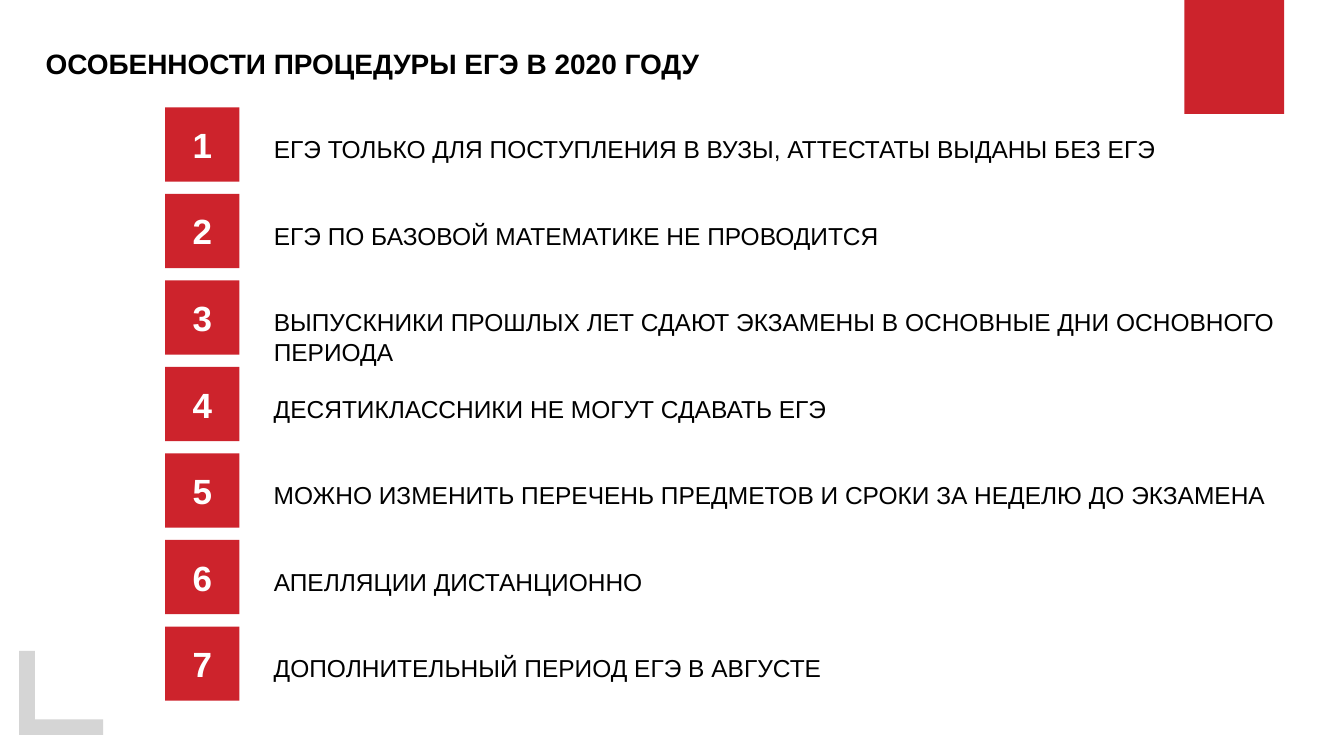
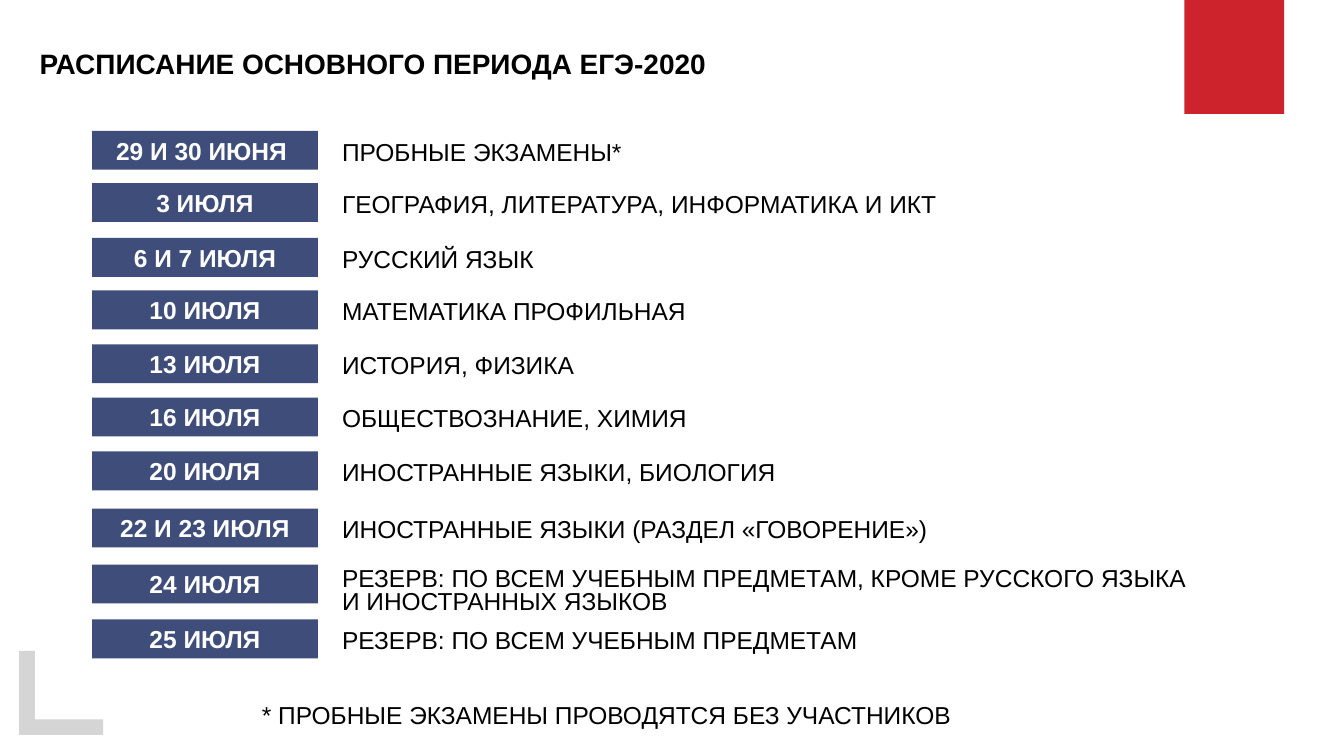
from pptx import Presentation
from pptx.dml.color import RGBColor
from pptx.enum.shapes import MSO_SHAPE
from pptx.enum.text import MSO_ANCHOR, MSO_AUTO_SIZE, PP_ALIGN
from pptx.util import Pt

FONT = "Arial"
COLORS = {
    "black": "000000",
    "white": "FFFFFF",
    "corner": "D5D5D5",
    "tab": "CC232C",
    "number": "CD232C",
    "date": "3F4D7B",
}
TEXT_MARGIN = 7.2

FEATURES = [
    ("ЕГЭ ТОЛЬКО ДЛЯ ПОСТУПЛЕНИЯ В ВУЗЫ, АТТЕСТАТЫ ВЫДАНЫ БЕЗ ЕГЭ", 1292.5),
    ("ЕГЭ ПО БАЗОВОЙ МАТЕМАТИКЕ НЕ ПРОВОДИТСЯ", 1134.5),
    ("ВЫПУСКНИКИ ПРОШЛЫХ ЛЕТ СДАЮТ ЭКЗАМЕНЫ В ОСНОВНЫЕ ДНИ ОСНОВНОГО ПЕРИОДА", 1469),
    ("ДЕСЯТИКЛАССНИКИ НЕ МОГУТ СДАВАТЬ ЕГЭ", 1246.5),
    ("МОЖНО ИЗМЕНИТЬ ПЕРЕЧЕНЬ ПРЕДМЕТОВ И СРОКИ ЗА НЕДЕЛЮ ДО ЭКЗАМЕНА", 1487),
    ("АПЕЛЛЯЦИИ ДИСТАНЦИОННО", 754.5),
    ("ДОПОЛНИТЕЛЬНЫЙ ПЕРИОД ЕГЭ В АВГУСТЕ", 1168.5),
]

SCHEDULE = [
    (187, "29 И 30 ИЮНЯ ", ["ПРОБНЫЕ ЭКЗАМЕНЫ*"]),
    (261.5, "3 ИЮЛЯ", ["ГЕОГРАФИЯ, ЛИТЕРАТУРА, ИНФОРМАТИКА И ИКТ"]),
    (340, "6 И 7 ИЮЛЯ", ["РУССКИЙ ЯЗЫК"]),
    (415, "10 ИЮЛЯ", ["МАТЕМАТИКА ПРОФИЛЬНАЯ"]),
    (492, "13 ИЮЛЯ", ["ИСТОРИЯ, ФИЗИКА"]),
    (568, "16 ИЮЛЯ", ["ОБЩЕСТВОЗНАНИЕ, ХИМИЯ"]),
    (645, "20 ИЮЛЯ", ["ИНОСТРАННЫЕ ЯЗЫКИ, БИОЛОГИЯ"]),
    (726.5, "22 И 23 ИЮЛЯ", ["ИНОСТРАННЫЕ ЯЗЫКИ (РАЗДЕЛ «ГОВОРЕНИЕ»)"]),
    (806.5, "24 ИЮЛЯ", ["РЕЗЕРВ: ПО ВСЕМ УЧЕБНЫМ ПРЕДМЕТАМ, КРОМЕ РУССКОГО ЯЗЫКА",
                        "И ИНОСТРАННЫХ ЯЗЫКОВ"]),
    (885, "25 ИЮЛЯ", ["РЕЗЕРВ: ПО ВСЕМ УЧЕБНЫМ ПРЕДМЕТАМ"]),
]


def points(*lengths):
    """Convert numbers to point lengths."""
    return [Pt(length) for length in lengths]


def paint(shape, color):
    """Fill a shape with one flat colour, without line or shadow."""
    shape.fill.solid()
    shape.fill.fore_color.rgb = RGBColor.from_string(COLORS[color])
    shape.line.fill.background()
    shape.shadow.inherit = False


def write(shape, *lines, size=35, color="black", bold=False, align=PP_ALIGN.LEFT,
          anchor=MSO_ANCHOR.TOP, margin=TEXT_MARGIN, spacing=None, wrap=True):
    """Put formatted paragraphs into a shape."""
    frame = shape.text_frame
    frame.word_wrap = wrap
    frame.vertical_anchor = anchor
    frame.margin_left = frame.margin_right = Pt(margin)
    frame.margin_top = frame.margin_bottom = Pt(margin)
    frame.text = "\n".join(lines)
    for paragraph in frame.paragraphs:
        paragraph.alignment = align
        paragraph.space_before = Pt(0)
        if spacing:
            paragraph.line_spacing = Pt(spacing)
        paragraph.font.name = FONT
        paragraph.font.size = Pt(size)
        paragraph.font.bold = bold
        paragraph.font.color.rgb = RGBColor.from_string(COLORS[color])


def add_block(shapes, color, *box):
    """Draw a flat rectangle."""
    block = shapes.add_shape(MSO_SHAPE.RECTANGLE, *points(*box))
    paint(block, color)
    return block


def add_label(shapes, text, color, size, *box):
    """Draw a rectangle with a bold white label."""
    label = add_block(shapes, color, *box)
    write(label, text, size=size, color="white", bold=True, margin=0,
          align=PP_ALIGN.CENTER, anchor=MSO_ANCHOR.MIDDLE)


def add_text(shapes, lines, *box, **style):
    """Add a text box with one paragraph per line."""
    write(shapes.add_textbox(*points(*box)), *lines, **style)


def add_corner(shapes, left, top, side, thickness):
    """Draw the grey corner bracket."""
    right, bottom = left + side, top + side
    outline = [(left + thickness, top), (left + thickness, bottom - thickness),
               (right, bottom - thickness), (right, bottom), (left, bottom)]
    builder = shapes.build_freeform(*points(left, top))
    builder.add_line_segments([points(*corner) for corner in outline], close=True)
    corner = builder.convert_to_shape()
    paint(corner, "corner")
    return corner


def decorate_layout(layout, slide):
    """Give the layout the red tab and corner bracket."""
    corner = add_corner(slide.shapes, 27.5, 930, 120, 22.3)
    tab = add_block(slide.shapes, "tab", 1692, 0, 142.5, 162.7)
    for number, decoration in enumerate((corner, tab), start=100):
        decoration.element.nvSpPr.cNvPr.id = number
        layout.shapes.element.append(decoration.element)


def add_slide(deck, layout, title, left, width):
    """Add a slide with its heading."""
    slide = deck.slides.add_slide(layout)
    heading = slide.shapes.title
    heading.left, heading.top, heading.width, heading.height = points(left, 62.6, width, 57)
    write(heading, title, size=40, bold=True, align=PP_ALIGN.CENTER,
          anchor=MSO_ANCHOR.MIDDLE, margin=4.3, wrap=False)
    heading.text_frame.auto_size = MSO_AUTO_SIZE.SHAPE_TO_FIT_TEXT
    return slide


def add_features(slide):
    """Lay out the numbered features at an equal pitch."""
    for index, (feature, width) in enumerate(FEATURES):
        top = 153.4 + index * 123.6
        row = slide.shapes.add_group_shape().shapes
        add_label(row, str(index + 1), "number", 50, 236, top, 106, 106)
        add_text(row, [feature], 384, top + 31, width, 71.3)


def add_schedule(slide):
    """Lay out exam dates with their subjects."""
    for top, date, subjects in SCHEDULE:
        row = slide.shapes.add_group_shape().shapes
        add_label(row, date, "date", 35, 131.5, top, 322.5, 55.5)
        spacing = 32 if len(subjects) > 1 else None
        add_text(row, subjects, 481.5, top + 1, 1438, 54, spacing=spacing)


def main():
    """Build and save the deck."""
    deck = Presentation()
    deck.slide_width, deck.slide_height = points(1920, 1080)
    layout = deck.slide_layouts[5]

    features = add_slide(deck, layout, "ОСОБЕННОСТИ ПРОЦЕДУРЫ ЕГЭ В 2020 ГОДУ", 54.7, 954.7)
    decorate_layout(layout, features)
    add_features(features)

    schedule = add_slide(deck, layout, "РАСПИСАНИЕ ОСНОВНОГО ПЕРИОДА ЕГЭ-2020", 44, 977)
    add_schedule(schedule)
    add_text(schedule.shapes, ["* ПРОБНЫЕ ЭКЗАМЕНЫ ПРОВОДЯТСЯ БЕЗ УЧАСТНИКОВ"],
             367, 993, 1187, 54)
    deck.save("out.pptx")


if __name__ == "__main__":
    main()
